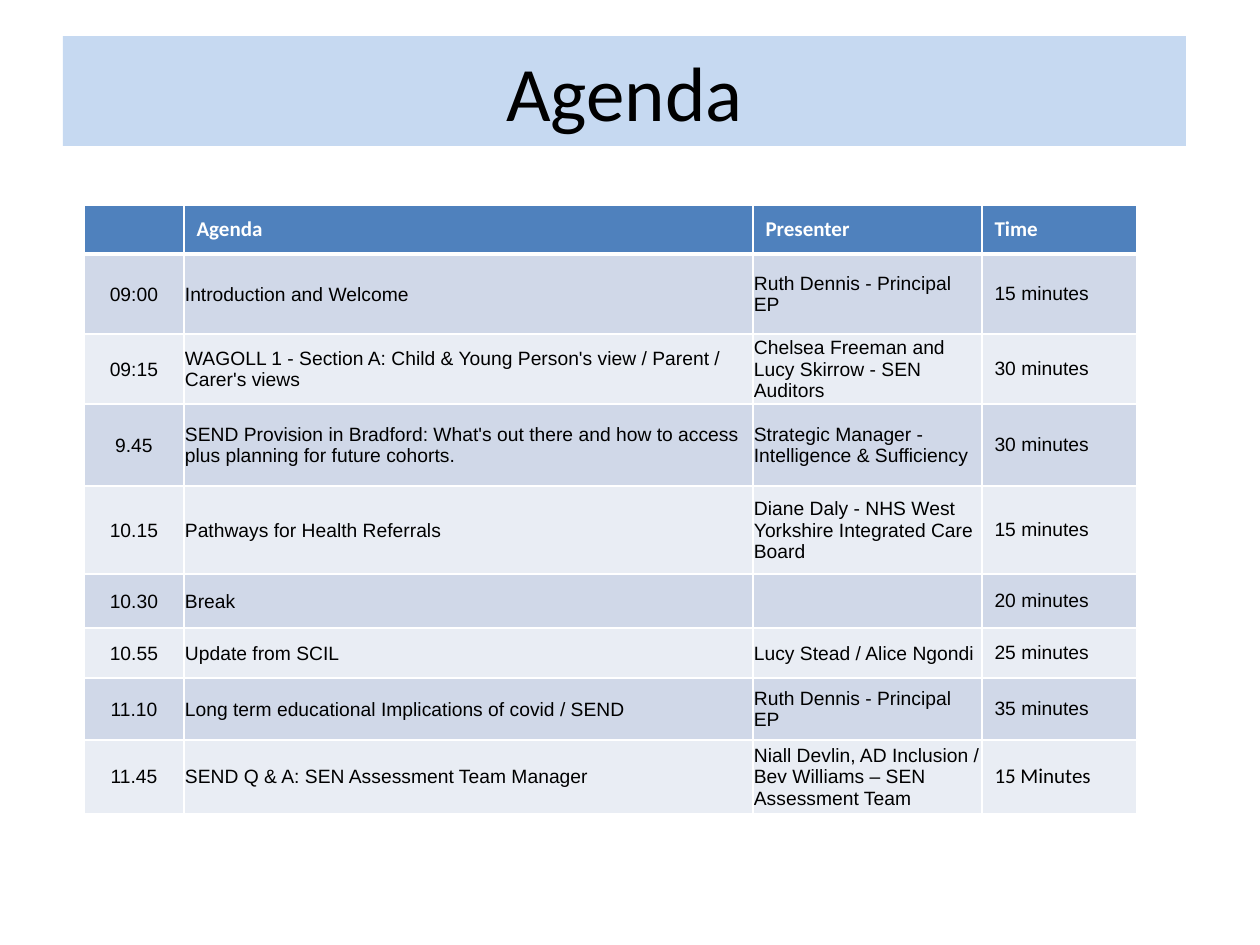
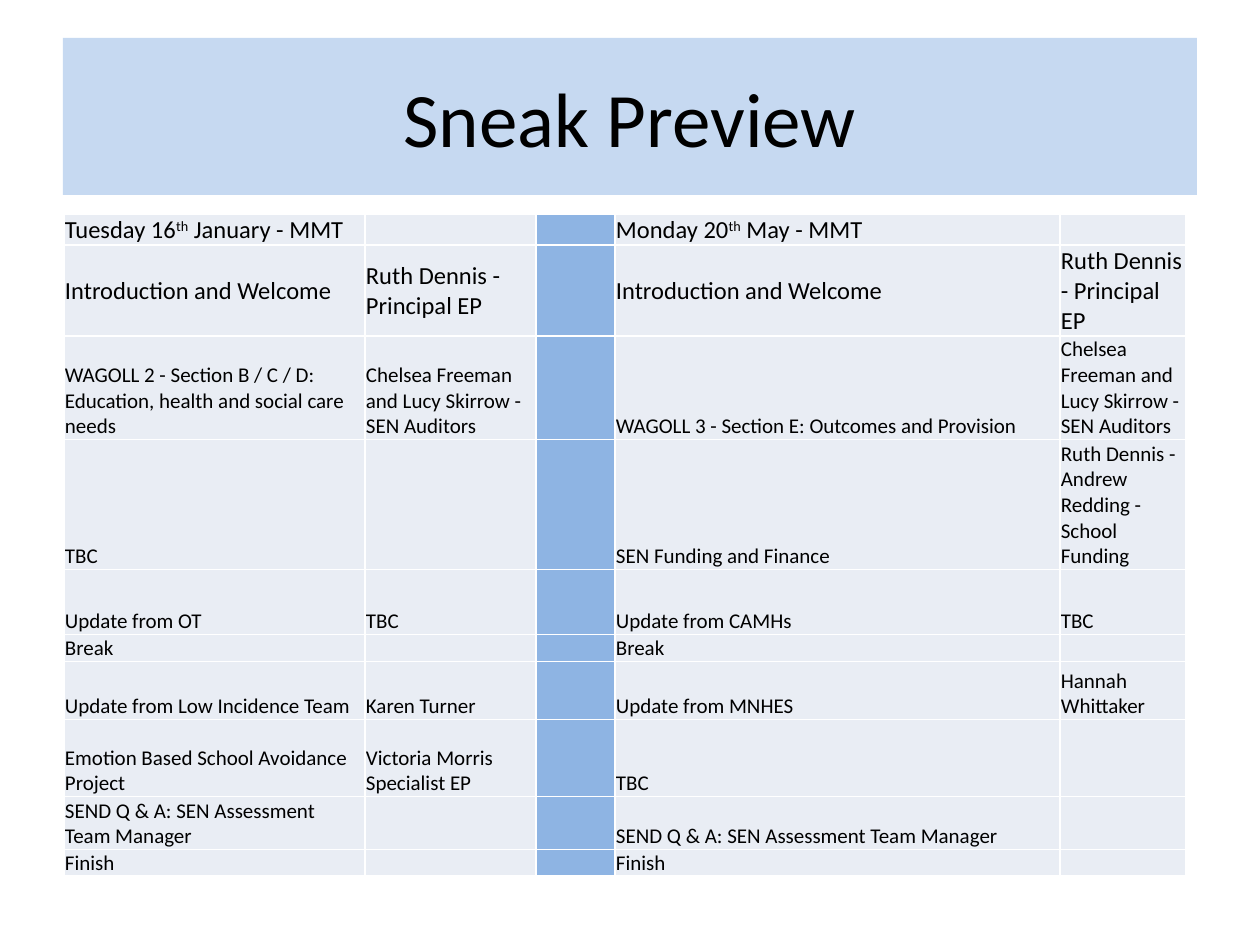
from dataclasses import dataclass

from lxml.etree import SubElement
from pptx import Presentation
from pptx.dml.color import RGBColor
from pptx.enum.shapes import MSO_SHAPE
from pptx.enum.text import MSO_ANCHOR, PP_ALIGN
from pptx.oxml.ns import qn
from pptx.util import Emu, Inches, Pt

PX_PER_INCH = 126


@dataclass(frozen=True)
class Theme:
    band: str = "C6D9F1"
    header: str = "4F81BD"
    row_dark: str = "D0D8E8"
    row_light: str = "E9EDF4"
    divider: str = "8EB4E3"
    white: str = "FFFFFF"
    ink: str = "000000"
    heading_font: str = "Calibri"
    body_font: str = "Arial"
    title_size: int = 44
    lead_size: int = 14
    text_size: int = 12
    small_size: int = 11


THEME = Theme()


@dataclass(frozen=True)
class CellStyle:
    """Look of one table cell; tight cells keep only a hairline inset."""
    fill: str
    font: str = THEME.heading_font
    size: int = THEME.text_size
    color: str = THEME.ink
    bold: bool = False
    align: PP_ALIGN = PP_ALIGN.LEFT
    anchor: MSO_ANCHOR = MSO_ANCHOR.MIDDLE
    tight: bool = True
    top: int = 1
    bottom: int = 1


AGENDA_BOX = (84, 205)
AGENDA_COLS = [100, 569, 229, 155]
AGENDA_ROWS = [49, 80, 70, 82, 88, 54, 50, 62, 74]
AGENDA = [
    ("", "Agenda", "Presenter", "Time"),
    ("09:00", "Introduction and Welcome", "Ruth Dennis - Principal EP", "15 minutes"),
    ("09:15", "WAGOLL 1 - Section A: Child & Young Person's view / Parent / Carer's views",
     "Chelsea Freeman and Lucy Skirrow - SEN Auditors", "30 minutes"),
    ("9.45", "SEND Provision in Bradford: What's out there and how to access "
     "plus planning for future cohorts.",
     "Strategic Manager - Intelligence & Sufficiency", "30 minutes"),
    ("10.15", "Pathways for Health Referrals",
     "Diane Daly - NHS West Yorkshire Integrated Care Board", "15 minutes"),
    ("10.30", "Break", "", "20 minutes"),
    ("10.55", "Update from SCIL", "Lucy Stead / Alice Ngondi", "25 minutes"),
    ("11.10", "Long term educational Implications of covid / SEND",
     "Ruth Dennis - Principal EP", "35 minutes"),
    ("11.45", "SEND Q & A: SEN Assessment Team Manager",
     "Niall Devlin, AD Inclusion / Bev Williams – SEN Assessment Team", "15 Minutes"),
]

PREVIEW_BOX = (64, 214)
PREVIEW_COLS = [301, 171, 79, 445, 126]
PREVIEW_ROWS = [31, 91, 103, 130, 65, 27, 58, 77, 53, 26]
DIVIDER_COL = 2
# Text between carets is superscript.
PREVIEW = [
    ("Tuesday 16^th^ January - MMT", "", "", "Monday 20^th^ May - MMT", ""),
    ("Introduction and Welcome", "Ruth Dennis - Principal EP", "",
     "Introduction and Welcome", "Ruth Dennis - Principal EP"),
    ("WAGOLL 2 - Section B / C / D: Education, health and social care needs",
     "Chelsea Freeman and Lucy Skirrow - SEN Auditors", "",
     "WAGOLL 3 - Section E: Outcomes and Provision",
     "Chelsea Freeman and Lucy Skirrow - SEN Auditors"),
    ("TBC", "", "", "SEN Funding and Finance",
     "Ruth Dennis - Andrew Redding - School Funding"),
    ("Update from OT", "TBC", "", "Update from CAMHs", "TBC"),
    ("Break", "", "", "Break", ""),
    ("Update from Low Incidence Team", "Karen Turner", "",
     "Update from MNHES", "Hannah Whittaker"),
    ("Emotion Based School Avoidance Project", "Victoria Morris Specialist EP", "",
     "TBC", ""),
    ("SEND Q & A: SEN Assessment Team Manager", "", "",
     "SEND Q & A: SEN Assessment Team Manager", ""),
    ("Finish", "", "", "Finish", ""),
]


def px(n):
    return Emu(round(n * Inches(1) / PX_PER_INCH))


def rgb(value):
    return RGBColor.from_string(value)


def add_run(p, text, font, size, color, bold=False):
    r = p.add_run()
    r.text = text
    r.font.name, r.font.size, r.font.bold = font, Pt(size), bold
    r.font.color.rgb = rgb(color)
    return r


def add_title_band(slide, text, box):
    sp = slide.shapes.add_shape(MSO_SHAPE.RECTANGLE, *map(px, box))
    sp.shadow.inherit = False
    sp.fill.solid()
    sp.fill.fore_color.rgb = rgb(THEME.band)
    sp.line.fill.background()
    tf = sp.text_frame
    tf.word_wrap = True
    tf.vertical_anchor = MSO_ANCHOR.MIDDLE
    p = tf.paragraphs[0]
    p.alignment = PP_ALIGN.CENTER
    add_run(p, text, THEME.heading_font, THEME.title_size, THEME.ink)


def add_borders(cell, style):
    tc_pr = cell._tc.get_or_add_tcPr()
    for side, width in (("L", 1), ("R", 1), ("T", style.top), ("B", style.bottom)):
        ln = SubElement(tc_pr, qn(f"a:ln{side}"), w=str(Pt(width)))
        SubElement(SubElement(ln, qn("a:solidFill")), qn("a:srgbClr"), val=THEME.white)


def fill_cell(cell, text, style):
    add_borders(cell, style)
    cell.fill.solid()
    cell.fill.fore_color.rgb = rgb(style.fill)
    cell.vertical_anchor = style.anchor
    if style.tight:
        cell.margin_left = cell.margin_right = cell.margin_top = px(1)
        cell.margin_bottom = 0
    p = cell.text_frame.paragraphs[0]
    p.alignment = style.align
    if not text:
        SubElement(p._p, qn("a:endParaRPr"), sz=str(style.size * 100))
        return
    for i, part in enumerate(text.split("^")):
        r = add_run(p, part, style.font, style.size, style.color, style.bold)
        if i % 2:
            r._r.get_or_add_rPr().set("baseline", "30000")


def add_grid(slide, origin, cols, rows, data, style_at, has_header):
    """Table whose cell looks come from style_at(row, column)."""
    box = (*origin, sum(cols), sum(rows))
    table = slide.shapes.add_table(len(rows), len(cols), *map(px, box)).table
    table.first_row, table.horz_banding = has_header, False
    for col, width in zip(table.columns, cols):
        col.width = px(width)
    for row, height in zip(table.rows, rows):
        row.height = px(height)
    for i, texts in enumerate(data):
        for j, text in enumerate(texts):
            fill_cell(table.cell(i, j), text, style_at(i, j))


def agenda_style(row, col):
    time_col = len(AGENDA_COLS) - 1
    if row == 0:
        return CellStyle(THEME.header, color=THEME.white, bold=True, tight=False, bottom=3)
    closing_time = row == len(AGENDA) - 1 and col == time_col
    return CellStyle(
        THEME.row_dark if row % 2 else THEME.row_light,
        font=THEME.heading_font if closing_time else THEME.body_font,
        size=THEME.text_size if closing_time else THEME.small_size,
        align=PP_ALIGN.LEFT if col else PP_ALIGN.CENTER,
        tight=col != time_col,
        top=3 if row == 1 else 1)


def preview_style(row, col):
    lead = row < 2
    return CellStyle(
        THEME.divider if col == DIVIDER_COL else THEME.row_light,
        size=THEME.lead_size if lead else THEME.text_size,
        anchor=MSO_ANCHOR.MIDDLE if lead else MSO_ANCHOR.BOTTOM)


def add_agenda_slide(slide):
    add_title_band(slide, "Agenda", (63, 36, 1123, 110))
    add_grid(slide, AGENDA_BOX, AGENDA_COLS, AGENDA_ROWS, AGENDA, agenda_style, True)


def add_preview_slide(slide):
    add_title_band(slide, "Sneak Preview", (63, 38, 1134, 157))
    add_grid(slide, PREVIEW_BOX, PREVIEW_COLS, PREVIEW_ROWS, PREVIEW, preview_style, False)


def main():
    prs = Presentation()
    prs.slide_width, prs.slide_height = Inches(10), Inches(7.5)
    for build in (add_agenda_slide, add_preview_slide):
        build(prs.slides.add_slide(prs.slide_layouts[6]))
    prs.save("out.pptx")


if __name__ == "__main__":
    main()
